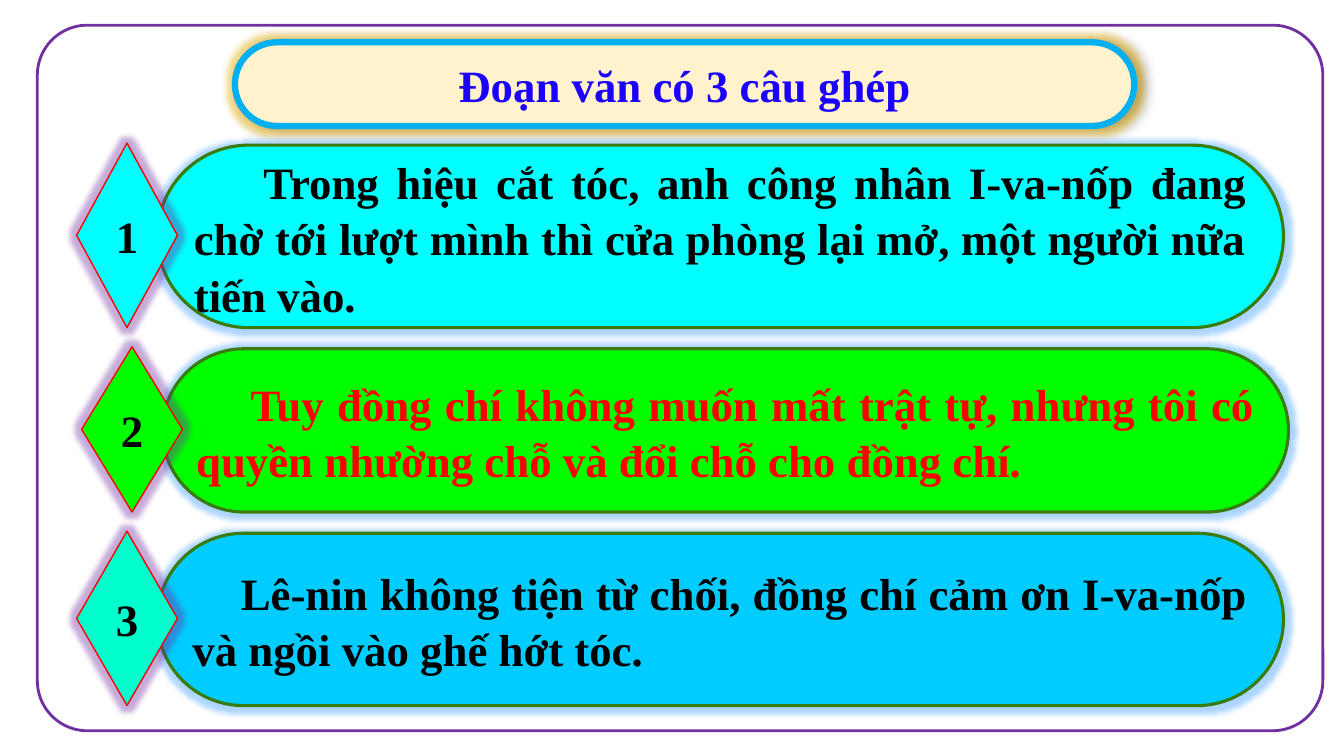
from lxml import etree
from pptx import Presentation
from pptx.dml.color import RGBColor
from pptx.enum import shapes as sh, text as tx
from pptx.oxml import ns
from pptx.util import Inches, Pt

FONT = "Times New Roman"
KIND = sh.MSO_SHAPE
ALIGN = tx.PP_ALIGN

# Left of diamond, its top, its height, fills of diamond and box, indent, ink, words
ROWS = [
    (0.76, 1.42, 1.83, "00FFFF", "00FFFF", 0.69, "000000",
     "Trong hiệu cắt tóc, anh công nhân I-va-nốp đang chờ tới lượt mình "
     "thì cửa phòng lại mở, một người nữa tiến vào."),
    (0.81, 3.44, 1.64, "00FF00", "00FF00", 0.54, "FF0000",
     "Tuy đồng chí không muốn mất trật tự, nhưng tôi có quyền nhường chỗ "
     "và đổi chỗ cho đồng chí."),
    (0.76, 5.27, 1.73, "00FFCC", "00CCFF", 0.48, "000000",
     "Lê-nin không tiện từ chối, đồng chí cảm ơn I-va-nốp và ngồi vào ghế "
     "hớt tóc."),
]


def color(code):
    return RGBColor.from_string(code)


def add_tint(parent, code, alpha):
    tint = etree.SubElement(parent, ns.qn("a:srgbClr"), val=code)
    etree.SubElement(tint, ns.qn("a:alpha"), val=str(alpha * 1000))


def add_glow(shape, code, size, shade=False):
    """Soft halo around a shape, with a shadow to the right if asked."""
    shape.shadow.inherit = False
    effects = shape._element.spPr.find(ns.qn("a:effectLst"))
    glow = etree.SubElement(effects, ns.qn("a:glow"), rad=str(Pt(size)))
    add_tint(glow, code, 40)
    if shade:
        cast = etree.SubElement(effects, ns.qn("a:outerShdw"),
                                blurRad=str(Pt(4)), dist=str(Pt(3)), dir="0")
        add_tint(cast, "000000", 40)


def add_form(parent, kind, box, line, width, fill=None, bend=None):
    shape = parent.add_shape(kind, *map(Inches, box))
    shape.shadow.inherit = False
    if bend is not None:
        shape.adjustments[0] = bend
    if fill:
        shape.fill.solid()
        shape.fill.fore_color.rgb = color(fill)
    else:
        shape.fill.background()
    shape.line.color.rgb = color(line)
    shape.line.width = Pt(width)
    return shape


def put_text(shape, words, ink="000000", align=ALIGN.CENTER, indent=0,
             pitch=None):
    frame = shape.text_frame
    frame.word_wrap = True
    frame.vertical_anchor = tx.MSO_ANCHOR.MIDDLE
    para = frame.paragraphs[0]
    para.alignment = align
    if pitch:
        para.line_spacing = pitch
    if indent:
        para._p.get_or_add_pPr().set("indent", str(Inches(indent)))
    run = para.add_run()
    run.text = words
    run.font.name = FONT
    run.font.size = Pt(32)
    run.font.bold = True
    run.font.color.rgb = color(ink)


def add_row(slide, number, row):
    left, top, high, gem_fill, box_fill, indent, ink, words = row
    group = slide.shapes.add_group_shape().shapes

    # Sentence box, starting under the diamond's right corner
    box = add_form(group, KIND.ROUNDED_RECTANGLE,
                   (left + 0.8, top + 0.02, 11.17, high - 0.02),
                   "397B0D", 2.25, box_fill, 0.5)
    add_glow(box, "3399FF", 8)
    put_text(box, words, ink, ALIGN.JUSTIFY, indent, 1.05)

    # Numbered diamond
    gem = add_form(group, KIND.DIAMOND, (left, top, 1, high),
                   "FF0000", 1, gem_fill)
    add_glow(gem, "7030A0", 8)
    put_text(gem, str(number))


def main():
    deck = Presentation()
    deck.slide_width, deck.slide_height = Inches(13.33), Inches(7.5)
    slide = deck.slides.add_slide(deck.slide_layouts[6])

    # Title
    title = add_form(slide.shapes, KIND.ROUNDED_RECTANGLE,
                     (2.33, 0.42, 8.92, 0.83), "00B0F0", 4.5, "FFF2CC", 0.5)
    add_glow(title, "FFC000", 8, shade=True)
    put_text(title, "Đoạn văn có 3 câu ghép", "1B00FE")

    # Frame
    add_form(slide.shapes, KIND.ROUNDED_RECTANGLE, (0.37, 0.25, 12.75, 7),
             "7030A0", 2, bend=0.071)

    # Sentences
    for number, row in enumerate(ROWS, 1):
        add_row(slide, number, row)

    deck.save("out.pptx")


if __name__ == "__main__":
    main()
